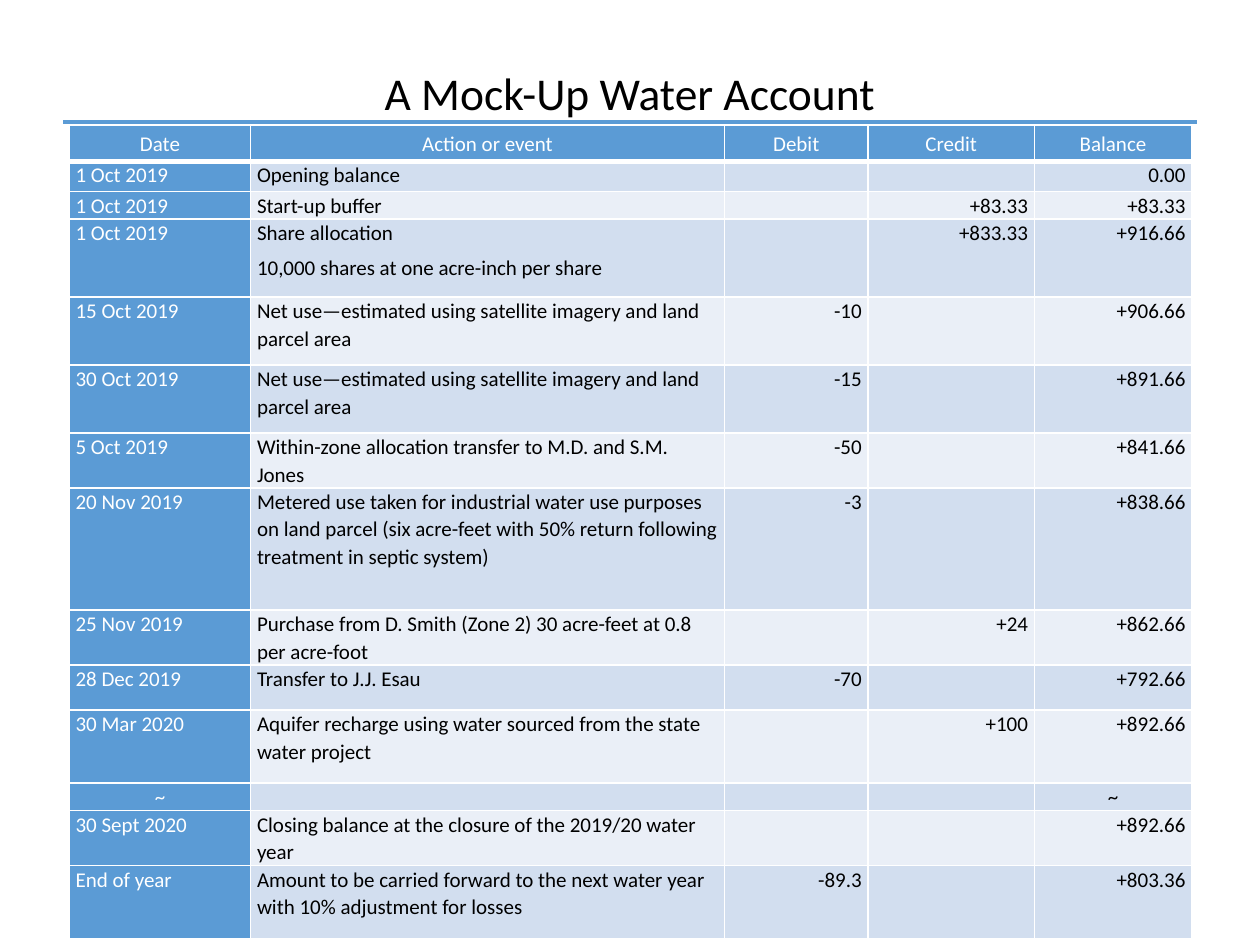
from dataclasses import dataclass

from lxml.etree import SubElement
from pptx import Presentation
from pptx.dml.color import RGBColor
from pptx.enum.shapes import MSO_CONNECTOR
from pptx.enum.text import MSO_ANCHOR, PP_ALIGN
from pptx.oxml.ns import qn
from pptx.util import Inches, Pt

TITLE = "A Mock-Up Water Account"
HEADINGS = ("Date", "Action or event", "Debit", "Credit", "Balance")
NET_USE = "Net use—estimated using satellite imagery and land parcel area"
ENTRIES = [
    ("1 Oct 2019", "Opening balance", "", "", "0.00"),
    ("1 Oct 2019", "Start-up buffer", "", "+83.33", "+83.33"),
    ("1 Oct 2019", "Share allocation\n10,000 shares at one acre-inch per share",
     "", "+833.33", "+916.66"),
    ("15 Oct 2019", NET_USE, "-10", "", "+906.66"),
    ("30 Oct 2019", NET_USE, "-15", "", "+891.66"),
    ("5 Oct 2019", "Within-zone allocation transfer to M.D. and S.M. Jones",
     "-50", "", "+841.66"),
    ("20 Nov 2019", "Metered use taken for industrial water use purposes on land parcel "
     "(six acre-feet with 50% return following treatment in septic system)",
     "-3", "", "+838.66"),
    ("25 Nov 2019", "Purchase from D. Smith (Zone 2) 30 acre-feet at 0.8 per acre-foot",
     "", "+24", "+862.66"),
    ("28 Dec 2019", "Transfer to J.J. Esau", "-70", "", "+792.66"),
    ("30 Mar 2020", "Aquifer recharge using water sourced from the state water project",
     "", "+100", "+892.66"),
    ("~", "", "", "", "~"),
    ("30 Sept 2020", "Closing balance at the closure of the 2019/20 water year",
     "", "", "+892.66"),
    ("End of year", "Amount to be carried forward to the next water year "
     "with 10% adjustment for losses", "-89.3", "", "+803.36"),
]

SLIDE_WIDTH, SLIDE_HEIGHT = 10, 7.5
MARGIN = 0.05 * SLIDE_WIDTH
TITLE_TOP, TITLE_HEIGHT = 0.47, 0.54
RULE_TOP = 0.97
TABLE_LEFT, TABLE_TOP = 0.55, 0.99
COLUMN_WIDTHS = (1.44, 3.76, 1.14, 1.32, 1.25)
ROW_HEIGHTS = (0.29, 0.24, 0.2, 0.62, 0.54, 0.54, 0.41, 0.97,
               0.41, 0.36, 0.58, 0.2, 0.41, 0.58)
CELL_MARGIN = 0.05
COLUMN_ALIGNMENTS = (PP_ALIGN.LEFT, PP_ALIGN.LEFT) + (PP_ALIGN.RIGHT,) * 3


@dataclass(frozen=True)
class Theme:
    font: str = "Calibri"
    title_size: float = 26
    body_size: float = 12
    rule_width: float = 2.25
    border_width: float = 1
    header_border_width: float = 3
    accent: str = "5B9BD5"
    bands: tuple = ("EAEFF7", "D2DEEF")
    dark: str = "000000"
    light: str = "FFFFFF"


THEME = Theme()


def add_run(paragraph, text, size, color):
    run = paragraph.add_run()
    run.text = text
    run.font.name = THEME.font
    run.font.size = Pt(size)
    run.font.color.rgb = RGBColor.from_string(color)


def add_title(slide):
    box = slide.shapes.add_textbox(
        Inches(MARGIN), Inches(TITLE_TOP),
        Inches(SLIDE_WIDTH - 2 * MARGIN), Inches(TITLE_HEIGHT))
    box.text_frame.word_wrap = True
    paragraph = box.text_frame.paragraphs[0]
    paragraph.alignment = PP_ALIGN.CENTER
    add_run(paragraph, TITLE, THEME.title_size, THEME.dark)


def add_rule(slide):
    rule = slide.shapes.add_connector(
        MSO_CONNECTOR.STRAIGHT, Inches(MARGIN), Inches(RULE_TOP),
        Inches(SLIDE_WIDTH - MARGIN), Inches(RULE_TOP))
    rule.line.color.rgb = RGBColor.from_string(THEME.accent)
    rule.line.width = Pt(THEME.rule_width)
    SubElement(rule.element.spPr, qn("a:effectLst"))


def set_borders(cell, top, bottom):
    properties = cell._tc.get_or_add_tcPr()
    side = THEME.border_width
    widths = {"lnL": side, "lnR": side, "lnT": top, "lnB": bottom}
    for edge, width in widths.items():
        line = SubElement(properties, qn(f"a:{edge}"), w=str(Pt(width)))
        fill = SubElement(line, qn("a:solidFill"))
        SubElement(fill, qn("a:srgbClr"), val=THEME.light)


def write_cell(cell, text, alignment, color):
    cell.margin_left = cell.margin_right = Inches(CELL_MARGIN)
    cell.margin_top = cell.margin_bottom = 0
    frame = cell.text_frame
    for index, line in enumerate(text.split("\n")):
        paragraph = frame.add_paragraph() if index else frame.paragraphs[0]
        paragraph.alignment = alignment
        paragraph.line_spacing = 1.07
        paragraph.space_before = paragraph.space_after = Pt(2)
        if line:
            add_run(paragraph, line, THEME.body_size, color)
        else:
            SubElement(paragraph._p, qn("a:endParaRPr"), sz=str(THEME.body_size * 100))


def add_account(slide):
    rows = [HEADINGS, *ENTRIES]
    table = slide.shapes.add_table(
        len(rows), len(HEADINGS), Inches(TABLE_LEFT), Inches(TABLE_TOP),
        Inches(sum(COLUMN_WIDTHS)), Inches(sum(ROW_HEIGHTS))).table
    for column, width in zip(table.columns, COLUMN_WIDTHS):
        column.width = Inches(width)
    for row, height in zip(table.rows, ROW_HEIGHTS):
        row.height = Inches(height)
    for row_index, values in enumerate(rows):
        is_header = row_index == 0
        for column_index, text in enumerate(values):
            cell = table.cell(row_index, column_index)
            is_accent = is_header or column_index == 0
            centered = is_header or text == "~"
            alignment = PP_ALIGN.CENTER if centered else COLUMN_ALIGNMENTS[column_index]
            write_cell(cell, text, alignment, THEME.light if is_accent else THEME.dark)
            cell.vertical_anchor = MSO_ANCHOR.MIDDLE if is_header else MSO_ANCHOR.TOP
            set_borders(
                cell,
                THEME.header_border_width if row_index == 1 else THEME.border_width,
                THEME.header_border_width if is_header else THEME.border_width)
            cell.fill.solid()
            cell.fill.fore_color.rgb = RGBColor.from_string(
                THEME.accent if is_accent else THEME.bands[row_index % 2])


def main():
    presentation = Presentation()
    presentation.slide_width = Inches(SLIDE_WIDTH)
    presentation.slide_height = Inches(SLIDE_HEIGHT)
    slide = presentation.slides.add_slide(presentation.slide_layouts[6])
    add_account(slide)
    add_rule(slide)
    add_title(slide)
    presentation.save("out.pptx")


if __name__ == "__main__":
    main()
